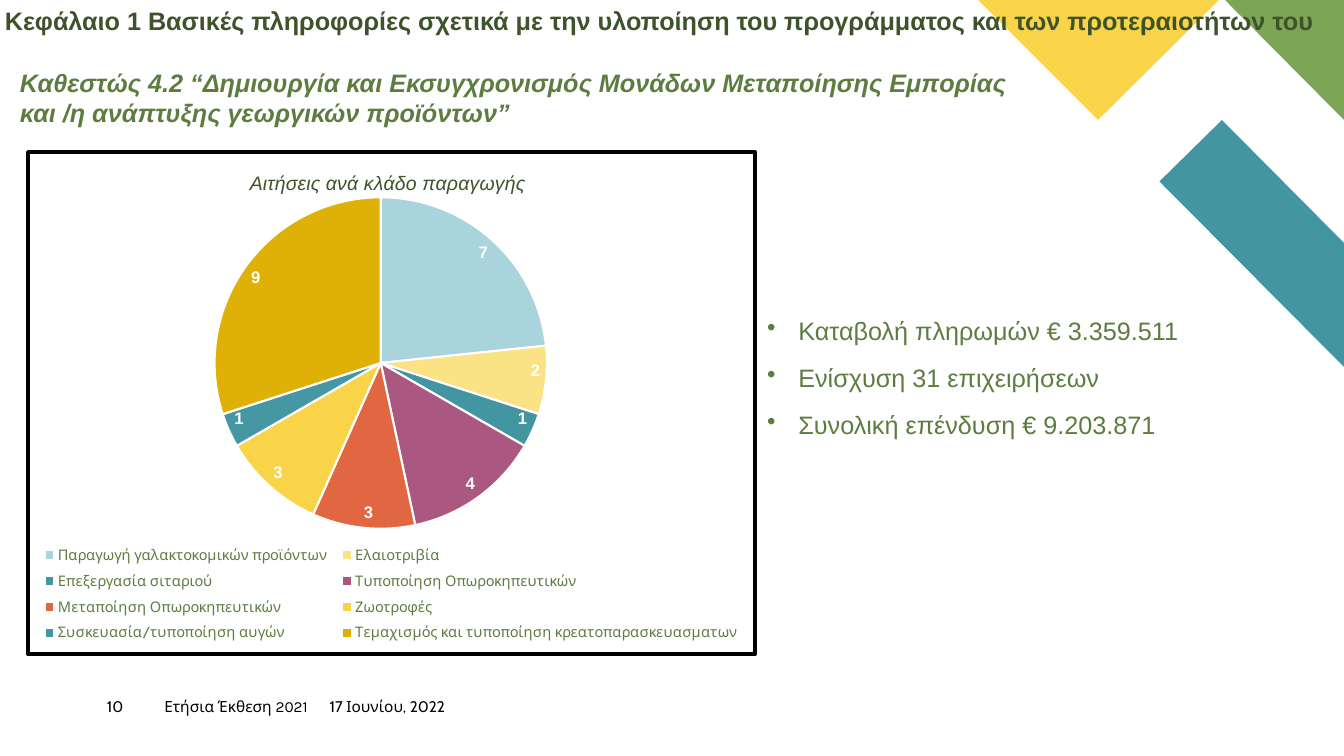
from lxml import etree
from pptx import Presentation, util as u
from pptx.chart.data import CategoryChartData
from pptx.dml.color import RGBColor
from pptx.enum import chart as charts
from pptx.oxml import parse_xml
from pptx.oxml.ns import nsdecls, qn

PX = 9144  # 100 px to the inch
DARK, GREEN, WHITE, BLACK = "3E532A", "5D7D40", "FFFFFF", "000000"


def px(value):
    return u.Emu(value * PX)


def colour(value):
    return RGBColor.from_string(value)


def place(parent, index, **values):
    """Give a chart part a manual layout, in fractions of the chart."""
    for old in parent.findall(qn("c:layout")):
        parent.remove(old)
    layout = etree.Element(qn("c:layout"))
    manual = etree.SubElement(layout, qn("c:manualLayout"))
    for tag, value in values.items():
        etree.SubElement(manual, qn("c:" + tag)).set("val", str(value))
    parent.insert(index, layout)


class SlideBuilder:
    def __init__(self, slide, font="Arial"):
        self.slide = slide
        self.font = font

    def style(self, font, size, color, name=None, bold=False, italic=False):
        font.name = name or self.font
        font.size = u.Pt(size)
        font.color.rgb = colour(color)
        font.bold, font.italic = bold, italic

    def polygon(self, points, fill):
        builder = self.slide.shapes.build_freeform(*points[0], scale=PX)
        builder.add_line_segments(points[1:], close=True)
        shape = builder.convert_to_shape()
        shape.shadow.inherit = False
        shape.fill.solid()
        shape.fill.fore_color.rgb = colour(fill)
        shape.line.fill.background()

    def text(self, box, lines, size, color, name=None, bold=False, italic=False,
             inset=True):
        frame = self.slide.shapes.add_textbox(*map(px, box)).text_frame
        frame.word_wrap = True
        if not inset:
            frame.margin_left = frame.margin_right = 0
            frame.margin_top = frame.margin_bottom = 0
        frame.text = "\n".join(lines)
        for paragraph in frame.paragraphs:
            for run in paragraph.runs:
                self.style(run.font, size, color, name, bold, italic)
        return frame

    def bullets(self, box, lines, size, color):
        for paragraph in self.text(box, lines, size, color).paragraphs:
            paragraph.space_before = paragraph.space_after = u.Pt(6)
            properties = paragraph._p.get_or_add_pPr()
            properties.set("marL", str(px(31)))
            properties.set("indent", str(-px(31)))
            properties.append(parse_xml(f'<a:buChar {nsdecls("a")} char="•"/>'))

    def pie(self, box, title, slices):
        data = CategoryChartData()
        data.categories = [name for name, _, _ in slices]
        data.add_series("Series 1", [value for _, value, _ in slices])
        chart = self.slide.shapes.add_chart(
            charts.XL_CHART_TYPE.PIE, *map(px, box), data).chart
        self.style(chart.font, 10, WHITE, "Cabin")

        # Title and legend
        chart.has_title = True
        chart.chart_title.text_frame.text = title
        run = chart.chart_title.text_frame.paragraphs[0].runs[0]
        self.style(run.font, 14, DARK, italic=True)
        chart.has_legend = True
        chart.legend.position = charts.XL_LEGEND_POSITION.BOTTOM
        chart.legend.include_in_layout = False
        self.style(chart.legend.font, 10.5, GREEN, "Cabin")

        # Slices and values
        plot = chart.plots[0]
        plot.vary_by_categories = True
        for index, (_, _, fill) in enumerate(slices):
            form = plot.series[0].points[index].format
            form.fill.solid()
            form.fill.fore_color.rgb = colour(fill)
            form.line.color.rgb = colour(WHITE)
            form.line.width = u.Pt(1.5)
        plot.has_data_labels = True
        labels = plot.data_labels
        labels.show_value = True
        labels.show_percentage = False
        labels.position = charts.XL_LABEL_POSITION.INSIDE_END
        self.style(labels.font, 12, WHITE, bold=True)

        # Layout and frame
        body = chart.element.find(qn("c:chart"))
        place(body.find(qn("c:title")), 1, xMode="edge", yMode="edge", x=0.3, y=0.03)
        place(body.find(qn("c:plotArea")), 0, layoutTarget="inner", xMode="edge",
              yMode="edge", x=0, y=0.09, w=0.97, h=0.66)
        place(body.find(qn("c:legend")), 1, xMode="edge", yMode="edge",
              x=0.01, y=0.77, w=0.98, h=0.22)
        body.addnext(parse_xml(
            f'<c:spPr {nsdecls("c", "a")}>'
            f'<a:solidFill><a:srgbClr val="{WHITE}"/></a:solidFill>'
            f'<a:ln w="{u.Pt(2.75)}"><a:solidFill><a:srgbClr val="{BLACK}"/></a:solidFill>'
            '<a:round/></a:ln></c:spPr>'))


def main():
    presentation = Presentation()
    presentation.slide_width, presentation.slide_height = px(1333), px(750)
    builder = SlideBuilder(presentation.slides.add_slide(presentation.slide_layouts[6]))

    # Corner decoration
    builder.polygon([(1333, 364), (1333, 241), (1212, 119), (1150, 180)], "4495A2")
    builder.polygon([(1333, 119), (1333, 0), (1215, 0)], "7CA655")
    builder.polygon([(970, 0), (1089, 119), (1209, 0)], "F9D448")

    # Footer
    for left, width, label, font in [(106, 57, "10", "Cabin"),
                                     (163, 164, "Ετήσια Έκθεση 2021", "Karla"),
                                     (327, 144, "17 Ιουνίου, 2022", "Cabin")]:
        builder.text((left, 692, width, 27), [label], 11, BLACK, font, inset=False)

    # Headings
    builder.text((-5, 0, 1333, 40),
                 ["Κεφάλαιο 1 Βασικές πληροφορίες σχετικά με την υλοποίηση του "
                  "προγράμματος και των προτεραιοτήτων του"], 18, DARK, bold=True)
    builder.text((10, 62, 1054, 81),
                 ["Καθεστώς 4.2 “Δημιουργία και Εκσυγχρονισμός Μονάδων Μεταποίησης Εμπορίας",
                  "και /η ανάπτυξης γεωργικών προϊόντων”"],
                 18, GREEN, bold=True, italic=True)

    # Applications by sector
    builder.pie((26, 149, 725, 502), "Αιτήσεις ανά κλάδο παραγωγής", [
        ("Παραγωγή γαλακτοκομικών προϊόντων", 7, "A9D4DB"),
        ("Ελαιοτριβία", 2, "FBE284"),
        ("Επεξεργασία σιταριού", 1, "4495A2"),
        ("Τυποποίηση Οπωροκηπευτικών", 4, "AA5881"),
        ("Μεταποίηση Οπωροκηπευτικών", 3, "E06742"),
        ("Ζωοτροφές", 3, "F9D448"),
        ("Συσκευασία/τυποποίηση αυγών", 1, "4597A4"),
        ("Τεμαχισμός και τυποποίηση κρεατοπαρασκευασματων", 9, "DFB107"),
    ])

    # Key results
    builder.bullets((751, 308, 448, 135),
                    ["Καταβολή πληρωμών € 3.359.511",
                     "Ενίσχυση 31 επιχειρήσεων",
                     "Συνολική επένδυση € 9.203.871"], 18, GREEN)

    presentation.save("out.pptx")


if __name__ == "__main__":
    main()
